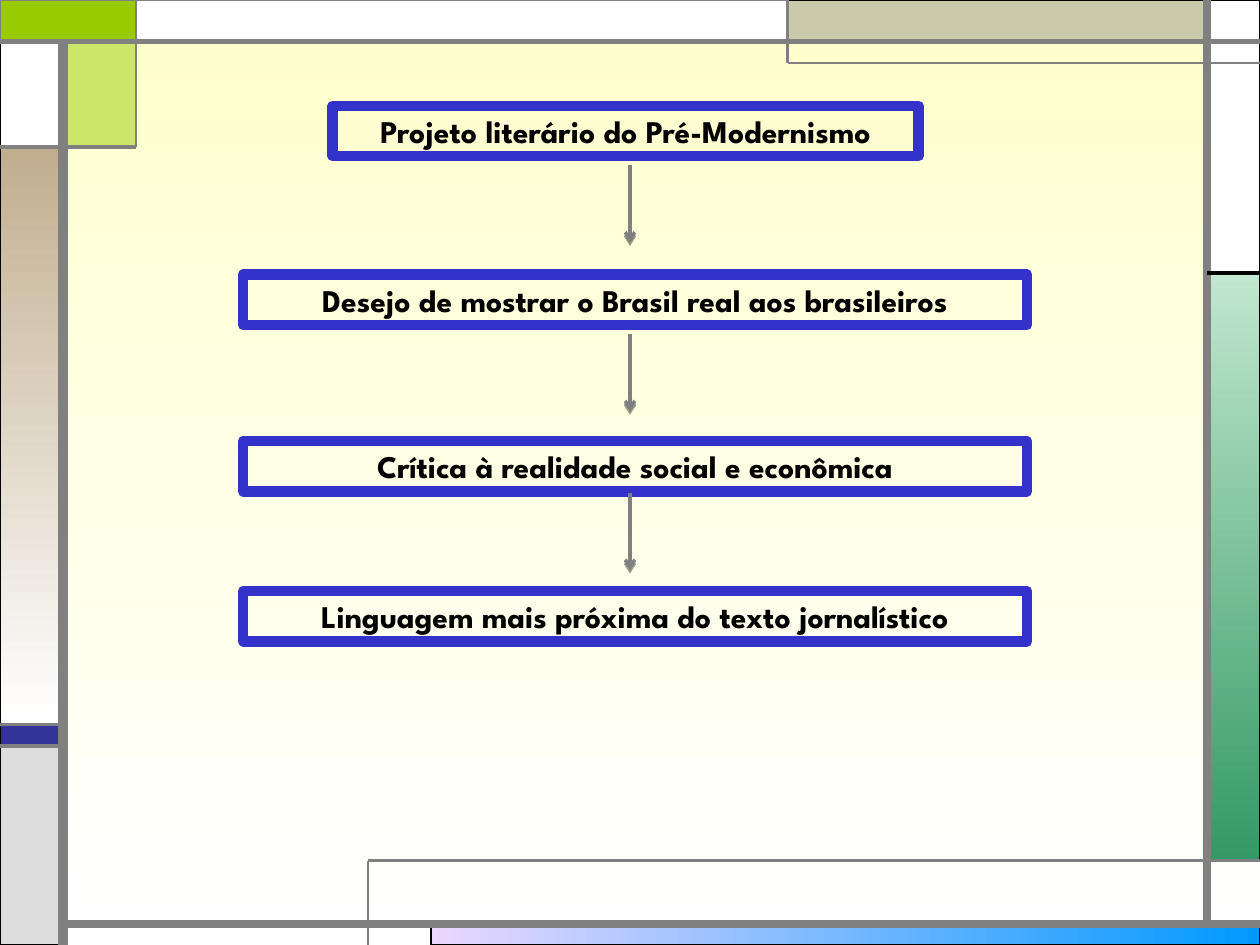
from lxml import etree
from pptx import Presentation
from pptx import util as u
from pptx.dml.color import RGBColor
from pptx.enum import shapes, text
from pptx.oxml import ns

FONT = "League Spartan"
HEX = {
    "cream": "FFFFCC", "white": "FFFFFF", "black": "000000", "gray": "808080",
    "lilac": "EBD7FF", "sky": "0099FF", "mint": "C1E7CE", "green": "339966",
    "navy": "333399", "silver": "DDDDDD", "khaki": "CAC9AA", "lime": "99CC00",
    "tan": "C1AE8F", "blue": "3333CC",
}


def rgb(name):
    """Return the named colour."""
    return RGBColor.from_string(HEX[name])


def sub(parent, tag, **attrs):
    """Append a drawing element to its parent."""
    return etree.SubElement(parent, ns.qn(tag), attrs)


def blend(fill, start, end, angle):
    """Fill with a two-colour gradient."""
    fill.gradient()
    fill.gradient_angle = angle
    for stop, name in zip(fill.gradient_stops, (start, end)):
        stop.color.rgb = rgb(name)


def block(slide, box, edge, width):
    """Add an outlined rectangle without shadow."""
    shape = slide.shapes.add_shape(
        shapes.MSO_SHAPE.RECTANGLE, *map(u.Inches, box))
    shape.shadow.inherit = False
    shape.line.color.rgb = rgb(edge)
    shape.line.width = u.Pt(width)
    return shape


def solid(slide, box, name, edge="black", width=0.75):
    """Add a rectangle of one colour."""
    shape = block(slide, box, edge, width)
    shape.fill.solid()
    shape.fill.fore_color.rgb = rgb(name)
    return shape


def rule(slide, ends, width, name="gray"):
    """Add a straight line and return it with its effect list."""
    line = slide.shapes.add_connector(
        shapes.MSO_CONNECTOR.STRAIGHT, *map(u.Inches, ends))
    line.line.color.rgb = rgb(name)
    line.line.width = u.Pt(width)
    return line, sub(line._element.spPr, "a:effectLst")


def arrow(slide, x, top, height):
    """Add a downward arrow with a soft shadow."""
    line, effects = rule(slide, (x, top, x, top + height), 2)
    sub(line.line._get_or_add_ln(), "a:tailEnd", type="arrow")
    shade = sub(effects, "a:outerShdw", blurRad="0", dist=str(u.Pt(1.6)),
                dir="5400000", rotWithShape="0")
    tint = sub(shade, "a:srgbClr", val=HEX["black"])
    sub(tint, "a:alpha", val="38000")


def panels(slide, left, top, right, base):
    """Place the coloured panels around the central area."""
    blends = [
        ((3.42, base, 6.58, 0.17), "lilac", "sky", 0),
        ((right, 2.17, 0.42, 4.67), "mint", "green", 270),
        ((0, 1.17, left, 4.58), "tan", "white", 270),
    ]
    for box, start, end, angle in blends:
        blend(block(slide, box, "black", 0.75).fill, start, end, angle)
    solids = [
        ((0, 5.75, left, 0.17), "navy"),
        ((0, 5.92, left, 1.58), "silver"),
        ((right, 0, 0.42, 2.17), "white"),
        ((6.25, 0, 3.33, top), "khaki"),
        ((0, top, left, 0.83), "white"),
    ]
    for box, name in solids:
        solid(slide, box, name)
    pale = solid(slide, (left, top, 0.58, 0.83), "lime")
    tint = pale._element.spPr.find(ns.qn("a:solidFill"))[0]
    sub(tint, "a:alpha", val="50000")
    solid(slide, (0, 0, 1.08, top), "lime", "gray", 1.5)
    solid(slide, (1.08, 0, 5.17, top), "white", "gray")


def rules(slide, left, top, right, base):
    """Draw the lines that frame the central area."""
    grays = [
        ((left, 7.5, left, top), 6),
        ((left, base, 10, base), 4.5),
        ((right, base, right, 0), 4.5),
        ((0, top, 10, top), 3),
        ((10, 0.5, 6.25, 0.5), 1.5),
        ((6.25, 0.5, 6.25, 0), 1.5),
        ((1.08, 0, 1.08, 1.17), 1.5),
        ((1.08, 1.17, 0, 1.17), 2.25),
        ((2.92, 7.5, 2.92, 6.83), 1.5),
        ((2.92, 6.83, 10, 6.83), 1.5),
        ((left, 5.75, 0, 5.75), 2.25),
        ((left, 5.92, 0, 5.92), 2.25),
    ]
    for ends, width in grays:
        rule(slide, ends, width)
    rule(slide, (right, 2.17, 10, 2.17), 2.25, "black")


def step(slide, box, words):
    """Add one framed step of the chain."""
    shape = block(slide, box, "blue", 6)
    shape.fill.background()
    frame = shape.text_frame
    frame.word_wrap = True
    frame.auto_size = text.MSO_AUTO_SIZE.SHAPE_TO_FIT_TEXT
    frame.vertical_anchor = text.MSO_ANCHOR.TOP
    para = frame.paragraphs[0]
    para.text = words
    para.alignment = text.PP_ALIGN.CENTER
    para.font.name = FONT
    para.font.size = u.Pt(18)
    para.font.bold = True
    para.font.color.rgb = rgb("black")


def chain(slide, left, width):
    """Place the steps and the arrows between them."""
    step(slide, (2.64, 0.84, 4.65, 0.4), "Projeto literário do Pré-Modernismo")
    steps = [
        (2.18, "Desejo de mostrar o Brasil real aos brasileiros"),
        (3.5, "Crítica à realidade social e econômica"),
        (4.69, "Linguagem mais próxima do texto jornalístico"),
    ]
    for top, words in steps:
        step(slide, (left, top, width, 0.4), words)
    for top in (1.31, 2.65, 3.91):
        arrow(slide, 5, top, 0.62)


def main():
    """Build and save the slide."""
    deck = Presentation()
    deck.slide_width, deck.slide_height = u.Inches(10), u.Inches(7.5)
    slide = deck.slides.add_slide(deck.slide_layouts[6])
    blend(slide.background.fill, "cream", "white", 270)
    area = (0.5, 0.33, 9.58, 7.33)
    panels(slide, *area)
    rules(slide, *area)
    chain(slide, 1.93, 6.22)
    deck.save("out.pptx")


if __name__ == "__main__":
    main()
